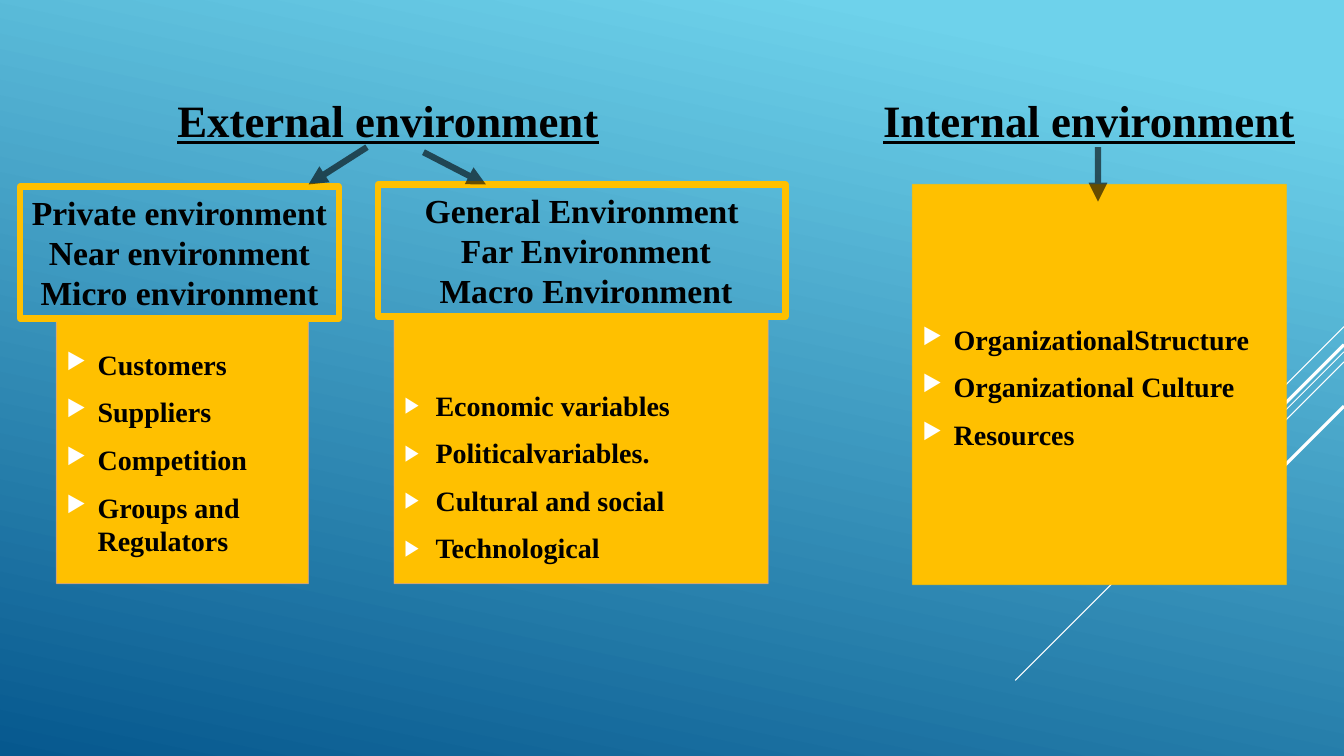
"""Build a slide comparing the external and internal environment of an organization."""
from pptx import Presentation
from pptx.dml.color import RGBColor
from pptx.enum.shapes import MSO_CONNECTOR as LINK, MSO_SHAPE as SHAPE
from pptx.enum.text import MSO_ANCHOR as ANCHOR, MSO_AUTO_SIZE as AUTO, PP_ALIGN as ALIGN
from pptx.oxml.ns import qn
from pptx.util import Pt
from lxml.etree import SubElement

PX = 9144
BLACK = RGBColor(0, 0, 0)
WHITE = RGBColor(0xFF, 0xFF, 0xFF)
GOLD = RGBColor(0xFF, 0xC0, 0x00)
PEACH = RGBColor(0xEE, 0xA7, 0x8F)
SKY = RGBColor(0x6E, 0xD2, 0xEB)
NAVY = RGBColor(0x06, 0x58, 0x8E)


def write(shape, lines, size, align):
    """Fill a shape with bold black paragraphs."""
    frame = shape.text_frame
    frame.text = "\n".join(lines)
    frame.word_wrap = True
    frame.auto_size = AUTO.NONE
    for para in frame.paragraphs:
        para.alignment = align
        for run in para.runs:
            font = run.font
            font.name, font.size, font.bold = "Times New Roman", Pt(size), True
            font.color.rgb = BLACK


def stroke(line, color, width, alpha=100):
    """Set the colour, width and opacity of a line."""
    line.color.rgb = color
    line.width = Pt(width)
    if alpha < 100:
        tint = line.fill._xPr.find(".//" + qn("a:srgbClr"))
        SubElement(tint, qn("a:alpha"), val=str(alpha * 1000))


deck = Presentation()
deck.slide_width, deck.slide_height = 1333 * PX, 750 * PX
slide = deck.slides.add_slide(deck.slide_layouts[1])
shapes = slide.shapes
title, body = slide.placeholders

back = slide.background.fill
back.gradient()
back.gradient_angle = 258
for stop, color, place in zip(back.gradient_stops, (SKY, NAVY), (0.1, 1)):
    stop.color.rgb = color
    stop.position = place

rays = [(324, 100, 0.75), (349, 326, 0.75), (359, 207, 0.75), (342, 191, 2.25), (403, 139, 2.25)]
for top, run, width in rays:
    ray = shapes.add_connector(LINK.STRAIGHT, 1333 * PX, top * PX,
                               (1333 - run) * PX, (top + run) * PX)
    stroke(ray.line, WHITE, width)
    SubElement(ray._element.spPr, qn("a:effectLst"))

lists = [
    (body, (391, 314, 371, 265), PEACH, 57,
     ["Economic variables", "Politicalvariables.", "Cultural and social", "Technological"]),
    (None, (905, 183, 371, 397), GOLD, 9,
     ["OrganizationalStructure", "Organizational Culture", "Resources"]),
    (None, (56, 314, 250, 265), PEACH, 9,
     ["Customers", "Suppliers", "Competition", "Groups and Regulators"]),
]
for panel, spot, edge, inset, items in lists:
    box = [n * PX for n in spot]
    if panel is None:
        panel = shapes.add_shape(SHAPE.RECTANGLE, *box)
        panel.shadow.inherit = False
    panel.left, panel.top, panel.width, panel.height = box
    panel.fill.solid()
    panel.fill.fore_color.rgb = GOLD
    stroke(panel.line, edge, 0.75, 60)
    write(panel, items, 20, ALIGN.LEFT)
    frame = panel.text_frame
    frame.vertical_anchor = ANCHOR.MIDDLE
    frame.margin_top = inset * PX
    for i, para in enumerate(frame.paragraphs):
        props = para._p.get_or_add_pPr()
        props.set("marL", str(31 * PX))
        props.set("indent", str(-31 * PX))
        SubElement(SubElement(props, qn("a:buClr")), qn("a:srgbClr"), val=str(WHITE))
        SubElement(props, qn("a:buSzPct"), val="80000")
        SubElement(props, qn("a:buChar"), char="▶")
        para.space_before = Pt(4 if i else 0)
        para.space_after = Pt(6)

inner = shapes.add_textbox(851 * PX, 87 * PX, 458 * PX, 64 * PX)
title.left, title.top, title.width, title.height = 117 * PX, 87 * PX, 536 * PX, 64 * PX
for head, text in [(title, "External environment"), (inner, "Internal environment")]:
    write(head, [text], 32, ALIGN.CENTER)
    head.text_frame.vertical_anchor = ANCHOR.TOP
    head.text_frame.paragraphs[0].runs[0].font.underline = True

frames = [
    ((375, 183, 404, 131), ["General Environment", " Far Environment", " Macro Environment"]),
    ((20, 185, 316, 131), ["Private environment", "Near environment", "Micro environment"]),
]
for spot, names in frames:
    label = shapes.add_shape(SHAPE.RECTANGLE, *[n * PX for n in spot])
    label.shadow.inherit = False
    label.fill.background()
    stroke(label.line, GOLD, 4.5)
    write(label, names, 24, ALIGN.CENTER)
    label.text_frame.vertical_anchor = ANCHOR.TOP

for ends in [(420, 151, 482, 183), (364, 146, 306, 183), (1089, 146, 1089, 200)]:
    arrow = shapes.add_connector(LINK.STRAIGHT, *[n * PX for n in ends])
    stroke(arrow.line, BLACK, 4.5, 60)
    SubElement(arrow.line._get_or_add_ln(), qn("a:tailEnd"), type="triangle")
    SubElement(arrow._element.spPr, qn("a:effectLst"))

deck.save("out.pptx")
